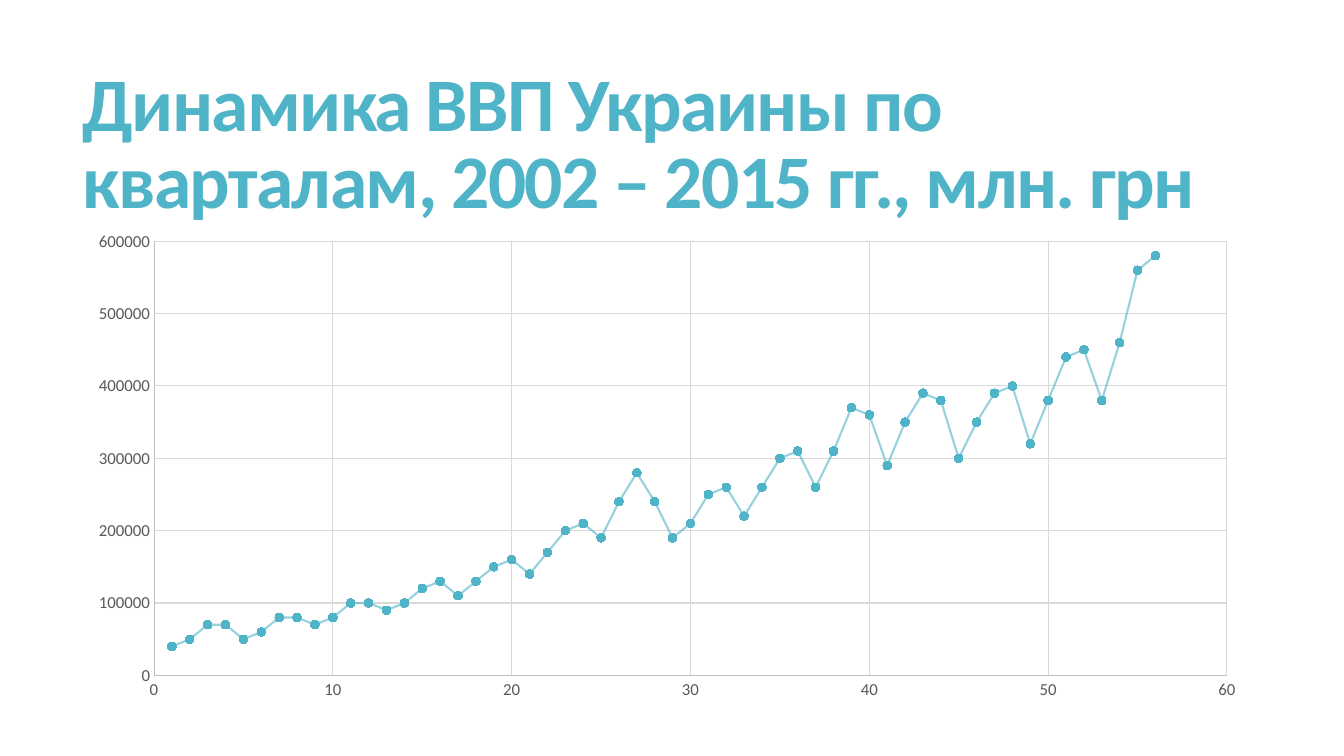
from dataclasses import dataclass

from lxml import etree
from pptx import Presentation
from pptx.chart.data import XyChartData
from pptx.dml.color import RGBColor
from pptx.enum.chart import XL_CHART_TYPE, XL_MARKER_STYLE, XL_TICK_MARK
from pptx.enum.text import MSO_ANCHOR, MSO_AUTO_SIZE, PP_ALIGN
from pptx.oxml.ns import qn
from pptx.util import Inches, Pt

SMOOTH_SCATTER = XL_CHART_TYPE.XY_SCATTER_SMOOTH
CIRCLE = XL_MARKER_STYLE.CIRCLE
NO_TICKS = XL_TICK_MARK.NONE
MIDDLE = MSO_ANCHOR.MIDDLE
NO_AUTOFIT = MSO_AUTO_SIZE.NONE
LEFT = PP_ALIGN.LEFT


@dataclass(frozen=True)
class Theme:
    font: str = "Calibri"
    accent: RGBColor = RGBColor(0x50, 0xB4, 0xC8)
    label: RGBColor = RGBColor(0x59, 0x59, 0x59)
    axis: RGBColor = RGBColor(0xBF, 0xBF, 0xBF)
    grid: RGBColor = RGBColor(0xD9, 0xD9, 0xD9)
    title_size: int = 54
    label_size: int = 12


@dataclass(frozen=True)
class AxisScale:
    maximum: int
    step: int


THEME = Theme()
TITLE = "Динамика ВВП Украины по кварталам, 2002 – 2015 гг., млн. грн"
QUARTER_SCALE = AxisScale(60, 10)
GDP_SCALE = AxisScale(600000, 100000)
PLOT_AREA = {"x": 0.067, "y": 0.04, "w": 0.905, "h": 0.89}

# Quarterly GDP in thousands of millions, one row per year from 2002
GDP_BY_YEAR = [
    (40, 50, 70, 70),
    (50, 60, 80, 80),
    (70, 80, 100, 100),
    (90, 100, 120, 130),
    (110, 130, 150, 160),
    (140, 170, 200, 210),
    (190, 240, 280, 240),
    (190, 210, 250, 260),
    (220, 260, 300, 310),
    (260, 310, 370, 360),
    (290, 350, 390, 380),
    (300, 350, 390, 400),
    (320, 380, 440, 450),
    (380, 460, 560, 580),
]


def add_title(slide) -> None:
    title = slide.shapes.title
    title.left, title.top = Inches(0.72), Inches(0.55)
    title.width, title.height = Inches(11.78), Inches(1.81)
    tf = title.text_frame
    tf.text = TITLE
    tf.word_wrap = True
    tf.auto_size = NO_AUTOFIT
    tf.vertical_anchor = MIDDLE
    p = tf.paragraphs[0]
    p.alignment = LEFT
    p.line_spacing = 0.85
    r = p.runs[0]
    r.font.name = THEME.font
    r.font.size = Pt(THEME.title_size)
    r.font.bold = True
    r.font.color.rgb = THEME.accent
    r._r.get_or_add_rPr().set("spc", "-120")


def style_axis(axis, scale: AxisScale) -> None:
    axis.minimum_scale = 0
    axis.maximum_scale = scale.maximum
    axis.major_unit = scale.step
    axis.major_tick_mark = axis.minor_tick_mark = NO_TICKS
    axis.has_major_gridlines = True
    for line, color in (
        (axis.format.line, THEME.axis),
        (axis.major_gridlines.format.line, THEME.grid),
    ):
        line.color.rgb = color
        line.width = Pt(0.75)
    axis.tick_labels.number_format = "General"
    axis.tick_labels.number_format_is_linked = False


def style_series(series) -> None:
    series.smooth = True
    line = series.format.line
    line.color.rgb = THEME.accent
    line.width = Pt(1.5)
    color = next(series.format.line._ln.iter(qn("a:srgbClr")))
    etree.SubElement(color, qn("a:alpha")).set("val", "60000")
    marker = series.marker
    marker.style = CIRCLE
    marker.size = 6
    marker.format.fill.solid()
    marker.format.fill.fore_color.rgb = THEME.accent
    marker.format.line.color.rgb = THEME.accent


def fix_plot_area(chart) -> None:
    """Place the inner plot area at set fractions of the chart."""
    plot_area = next(chart._chartSpace.iter(qn("c:plotArea")))
    layout = plot_area.find(qn("c:layout"))
    if layout is None:
        layout = etree.Element(qn("c:layout"))
        plot_area.insert(0, layout)
    manual = etree.SubElement(layout, qn("c:manualLayout"))
    settings = {"layoutTarget": "inner", "xMode": "edge", "yMode": "edge"}
    for name, value in (settings | PLOT_AREA).items():
        etree.SubElement(manual, qn(f"c:{name}")).set("val", str(value))


def add_gdp_chart(slide) -> None:
    data = XyChartData()
    points = data.add_series("Series 1")
    gdp = [value * 1000 for year in GDP_BY_YEAR for value in year]
    for quarter, value in enumerate(gdp, start=1):
        points.add_data_point(quarter, value)

    chart = slide.shapes.add_chart(
        SMOOTH_SCATTER, Inches(0.74), Inches(2.2), Inches(11.76), Inches(4.84), data
    ).chart
    chart.has_title = False
    chart.has_legend = False
    chart.font.name = THEME.font
    chart.font.size = Pt(THEME.label_size)
    chart.font.color.rgb = THEME.label
    chart.plots[0].vary_by_categories = False
    style_axis(chart.category_axis, QUARTER_SCALE)
    style_axis(chart.value_axis, GDP_SCALE)
    style_series(chart.plots[0].series[0])
    fix_plot_area(chart)


def main() -> None:
    prs = Presentation()
    prs.slide_width, prs.slide_height = Inches(13.33), Inches(7.5)
    slide = prs.slides.add_slide(prs.slide_layouts[5])
    add_title(slide)
    add_gdp_chart(slide)
    prs.save("out.pptx")


if __name__ == "__main__":
    main()
